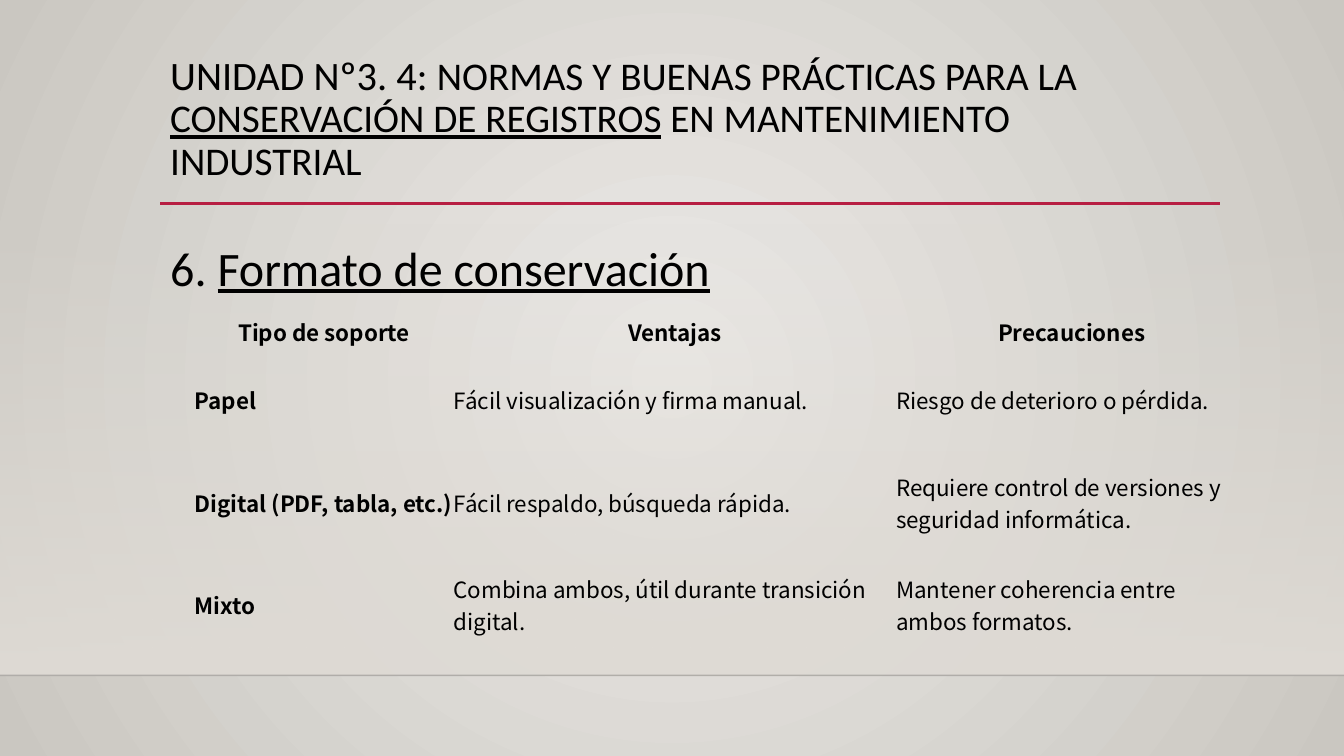
import pptx
import pptx.dml.color
import pptx.enum.shapes
import pptx.enum.text
import pptx.oxml
import pptx.util

Inches = pptx.util.Inches
Pt = pptx.util.Pt
ALIGN = pptx.enum.text.PP_ALIGN
ANCHOR = pptx.enum.text.MSO_ANCHOR
DRAWING = "http://schemas.openxmlformats.org/drawingml/2006/main"
PLAIN_TABLE_STYLE = "{2D5ABB26-0587-4C30-8999-92F81FD0307C}"


def color(value):
    return pptx.dml.color.RGBColor.from_string(value)


def apply_format(target, values):
    for name, value in values.items():
        setattr(target, name, value)


class SlideBuilder:
    heading_font = "Calibri"
    table_font = "Noto Sans CJK SC"
    text_color = "000000"

    def __init__(self, slide):
        self.slide = slide

    def gradient(self, owner, element, stops, direction):
        """Fill owner with stops of (position %, colour, opacity %)."""
        owner.fill.gradient()
        stop_xml = "".join(
            f'<a:gs pos="{position * 1000}"><a:srgbClr val="{value}">'
            f'<a:alpha val="{opacity * 1000}"/></a:srgbClr></a:gs>'
            for position, value, opacity in stops)
        fill = pptx.oxml.parse_xml(
            f'<a:gradFill xmlns:a="{DRAWING}" rotWithShape="1">'
            f'<a:gsLst>{stop_xml}</a:gsLst>{direction}</a:gradFill>')
        previous = element.xpath(".//a:gradFill")[0]
        previous.getparent().replace(previous, fill)

    def background(self, center, edge):
        self.gradient(
            self.slide.background, self.slide.element,
            [(0, center, 100), (100, edge, 100)],
            '<a:path path="circle">'
            '<a:fillToRect l="50000" t="50000" r="50000" b="50000"/></a:path>')

    def fading_band(self, left, top, width, height, value):
        shape = self.slide.shapes.add_shape(
            pptx.enum.shapes.MSO_SHAPE.RECTANGLE,
            Inches(left), Inches(top), Inches(width), Inches(height))
        shape.shadow.inherit = False
        shape.line.fill.background()
        self.gradient(shape, shape.element, [(0, value, 0), (100, value, 100)],
                      '<a:lin ang="5400000" scaled="0"/>')

    def rule(self, left, right, y, value, width, opacity=100):
        line = self.slide.shapes.add_connector(
            pptx.enum.shapes.MSO_CONNECTOR.STRAIGHT,
            Inches(left), Inches(y), Inches(right), Inches(y))
        line.line.color.rgb = color(value)
        line.line.width = Pt(width)
        properties = line.element.spPr
        alpha = pptx.oxml.parse_xml(
            f'<a:alpha xmlns:a="{DRAWING}" val="{opacity * 1000}"/>')
        properties.xpath(".//a:srgbClr")[0].append(alpha)
        properties.append(
            pptx.oxml.parse_xml(f'<a:effectLst xmlns:a="{DRAWING}"/>'))

    def add_run(self, paragraph, text, font, size, **style):
        run = paragraph.add_run()
        run.text = text
        apply_format(run.font, {"name": font, "size": Pt(size), **style})
        run.font.color.rgb = color(self.text_color)

    def text(self, left, top, width, height, line_spacing, runs):
        """Add a one-paragraph box; runs are (text, size, underline)."""
        box = self.slide.shapes.add_textbox(
            Inches(left), Inches(top), Inches(width), Inches(height))
        apply_format(box.text_frame,
                     {"word_wrap": True, "vertical_anchor": ANCHOR.TOP})
        paragraph = box.text_frame.paragraphs[0]
        paragraph.line_spacing = line_spacing
        for text, size, underline in runs:
            self.add_run(paragraph, text, self.heading_font, size,
                         underline=underline)

    def table(self, left, top, widths, heights, rows, size):
        frame = self.slide.shapes.add_table(
            len(heights), len(widths), Inches(left), Inches(top),
            Inches(sum(widths)), Inches(sum(heights)))
        frame.element.xpath(".//a:tableStyleId")[0].text = PLAIN_TABLE_STYLE
        table = frame.table
        apply_format(table, {"first_row": False, "horz_banding": False})
        for column, width in zip(table.columns, widths):
            column.width = Inches(width)
        for row, height in zip(table.rows, heights):
            row.height = Inches(height)
        margins = ("margin_left", "margin_right", "margin_top", "margin_bottom")
        for row_index, texts in enumerate(rows):
            for column_index, text in enumerate(texts):
                cell = table.cell(row_index, column_index)
                cell.fill.background()
                apply_format(cell, {"vertical_anchor": ANCHOR.MIDDLE,
                                    **dict.fromkeys(margins, 0)})
                paragraph = cell.text_frame.paragraphs[0]
                is_header = row_index == 0
                paragraph.alignment = ALIGN.CENTER if is_header else ALIGN.LEFT
                self.add_run(paragraph, text, self.table_font, size,
                             bold=is_header or column_index == 0)


def main():
    presentation = pptx.Presentation()
    presentation.slide_width = Inches(13.33)
    presentation.slide_height = Inches(7.5)
    builder = SlideBuilder(
        presentation.slides.add_slide(presentation.slide_layouts[6]))

    builder.background("ECEAE7", "CAC7C1")
    builder.fading_band(0, 2.21, 13.33, 4.49, "DFDBD5")
    builder.rule(0, 13.33, 6.7, "000001", 1, opacity=20)
    builder.rule(1.59, 12.1, 2.02, "B71E42", 2.5)

    builder.text(1.59, 0.5, 10.5, 1.53, 0.9, [
        ("UNIDAD Nº3. 4: ", 28.8, False),
        ("NORMAS Y BUENAS PRÁCTICAS PARA LA ", 28, False),
        ("CONSERVACIÓN DE REGISTROS", 28, True),
        (" EN MANTENIMIENTO INDUSTRIAL", 28, False),
    ])
    builder.text(1.59, 2.2, 10.5, 3.77, 1.2, [
        ("6. ", 34.3, False),
        ("Formato de conservación", 34.3, True),
    ])
    builder.table(1.93, 2.95, [2.57, 4.39, 3.48], [0.68, 0.68, 1.35, 0.68], [
        ("Tipo de soporte", "Ventajas", "Precauciones"),
        ("Papel", "Fácil visualización y firma manual.",
         "Riesgo de deterioro o pérdida."),
        ("Digital (PDF, tabla, etc.)", "Fácil respaldo, búsqueda rápida.",
         "Requiere control de versiones y seguridad informática."),
        ("Mixto", "Combina ambos, útil durante transición digital.",
         "Mantener coherencia entre ambos formatos."),
    ], size=16)

    presentation.save("out.pptx")


if __name__ == "__main__":
    main()
